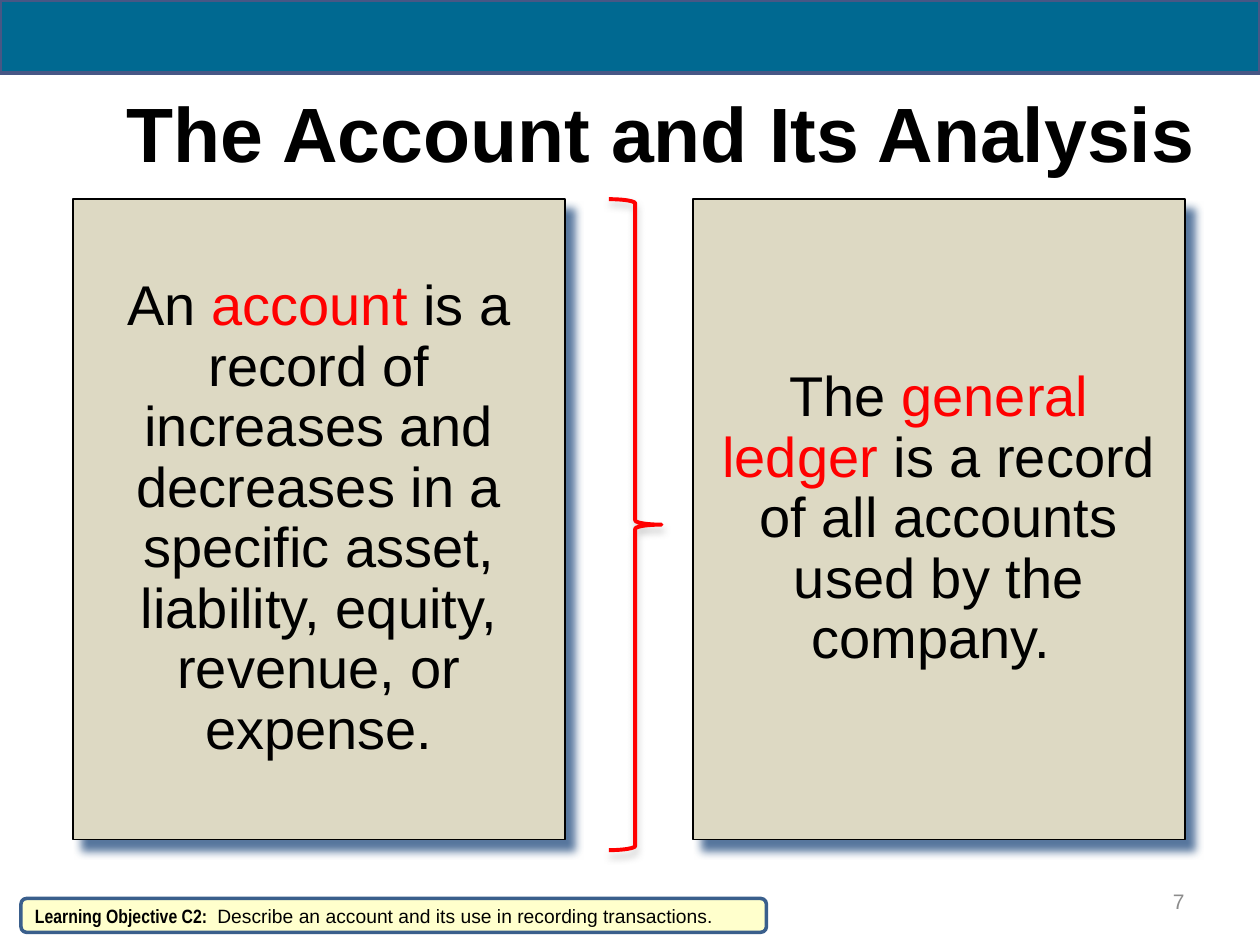
"""Build the slide that defines an account and the general ledger."""
import lxml.etree
import pptx
import pptx.dml.color
import pptx.enum.shapes
import pptx.enum.text
import pptx.oxml.ns
import pptx.util

Pt = pptx.util.Pt
SHAPE = pptx.enum.shapes.MSO_SHAPE
ALIGN = pptx.enum.text.PP_ALIGN
MIDDLE = pptx.enum.text.MSO_ANCHOR.MIDDLE
COLORS = {
    "text": "000000", "accent": "FF0000", "card": "DDD9C3",
    "card_shadow": "1F497D", "brace_shadow": "808080",
    "banner": "006991", "banner_edge": "475785",
    "note": "FFFFCC", "note_edge": "3A5F8C", "number": "8C8C8C",
}


def rgb(name):
    return pptx.dml.color.RGBColor.from_string(COLORS[name])


def add_panel(kind, box, fill, edge, width, shadow=None):
    panel = slide.shapes.add_shape(kind, *map(Pt, box))
    if fill:
        panel.fill.solid()
        panel.fill.fore_color.rgb = rgb(fill)
    else:
        panel.fill.background()
    panel.line.color.rgb = rgb(edge)
    panel.line.width = Pt(width)
    panel.shadow.inherit = False
    if shadow:
        color, alpha, blur, distance, angle = shadow
        qn = pptx.oxml.ns.qn
        effects = panel._element.spPr.find(qn("a:effectLst"))
        outer = lxml.etree.SubElement(
            effects, qn("a:outerShdw"), blurRad=str(Pt(blur)), dist=str(Pt(distance)),
            dir=str(angle * 60000), algn="tl", rotWithShape="0")
        tint = lxml.etree.SubElement(outer, qn("a:srgbClr"), val=COLORS[color])
        lxml.etree.SubElement(tint, qn("a:alpha"), val=str(alpha * 1000))
    return panel


deck = pptx.Presentation()
deck.slide_width, deck.slide_height = Pt(720), Pt(540)
slide = deck.slides.add_slide(deck.slide_layouts[6])

definitions = [
    (41.8, "An ", "account", " is a record of increases and decreases in a specific "
     "asset, liability, equity, revenue, or expense."),
    (396, "The ", "general ledger", " is a record of all accounts used by the company. "),
]
for left, opening, term, meaning in definitions:
    card = add_panel(SHAPE.RECTANGLE, (left, 113.8, 281, 366), "card", "text", 1,
                     ("card_shadow", 75, 5, 7.8, 50))
    card.text_frame.word_wrap = True
    card.text_frame.vertical_anchor = MIDDLE
    definition = card.text_frame.paragraphs[0]
    definition.alignment = ALIGN.CENTER
    definition.line_spacing = 0.9
    definition.space_before = Pt(9.6)
    definition.font.name, definition.font.size = "Arial", Pt(32)
    for words, color in ((opening, "text"), (term, "accent"), (meaning, "text")):
        run = definition.add_run()
        run.text = words
        run.font.color.rgb = rgb(color)

labels = [
    ("The Account and Its Analysis", (54, 26, 648, 98.6), 44, True, "text", ALIGN.CENTER),
    ("7", (516, 500.5, 168, 28.8), 12, False, "number", ALIGN.RIGHT),
]
for words, box, size, bold, color, alignment in labels:
    label = slide.shapes.add_textbox(*map(Pt, box)).text_frame
    label.word_wrap = True
    label.vertical_anchor = MIDDLE
    line = label.paragraphs[0]
    line.text = words
    line.alignment = alignment
    line.font.name, line.font.size, line.font.bold = "Arial", Pt(size), bold
    line.font.color.rgb = rgb(color)

brace = add_panel(SHAPE.RIGHT_BRACE, (348, 113.8, 30, 372), None, "accent", 2.25,
                  ("brace_shadow", 40, 4, 3, 90))
brace.adjustments[0] = 0.08
brace.adjustments[1] = 0.5

add_panel(SHAPE.RECTANGLE, (0, 0, 720, 42), "banner", "banner_edge", 2.25)

objective = add_panel(SHAPE.ROUNDED_RECTANGLE, (12, 513.4, 426, 19.4),
                      "note", "note_edge", 2)
objective.text_frame.word_wrap = True
objective.text_frame.vertical_anchor = MIDDLE
sentence = objective.text_frame.paragraphs[0]
sentence.alignment = ALIGN.LEFT
sentence.font.size = Pt(11)
sentence.font.color.rgb = rgb("text")
for words, font, bold in (
    ("Learning Objective C2: ", "Arial Narrow", True),
    (" Describe an account and its use in recording transactions.", "Arial", False),
):
    run = sentence.add_run()
    run.text = words
    run.font.name, run.font.bold = font, bold

deck.save("out.pptx")
